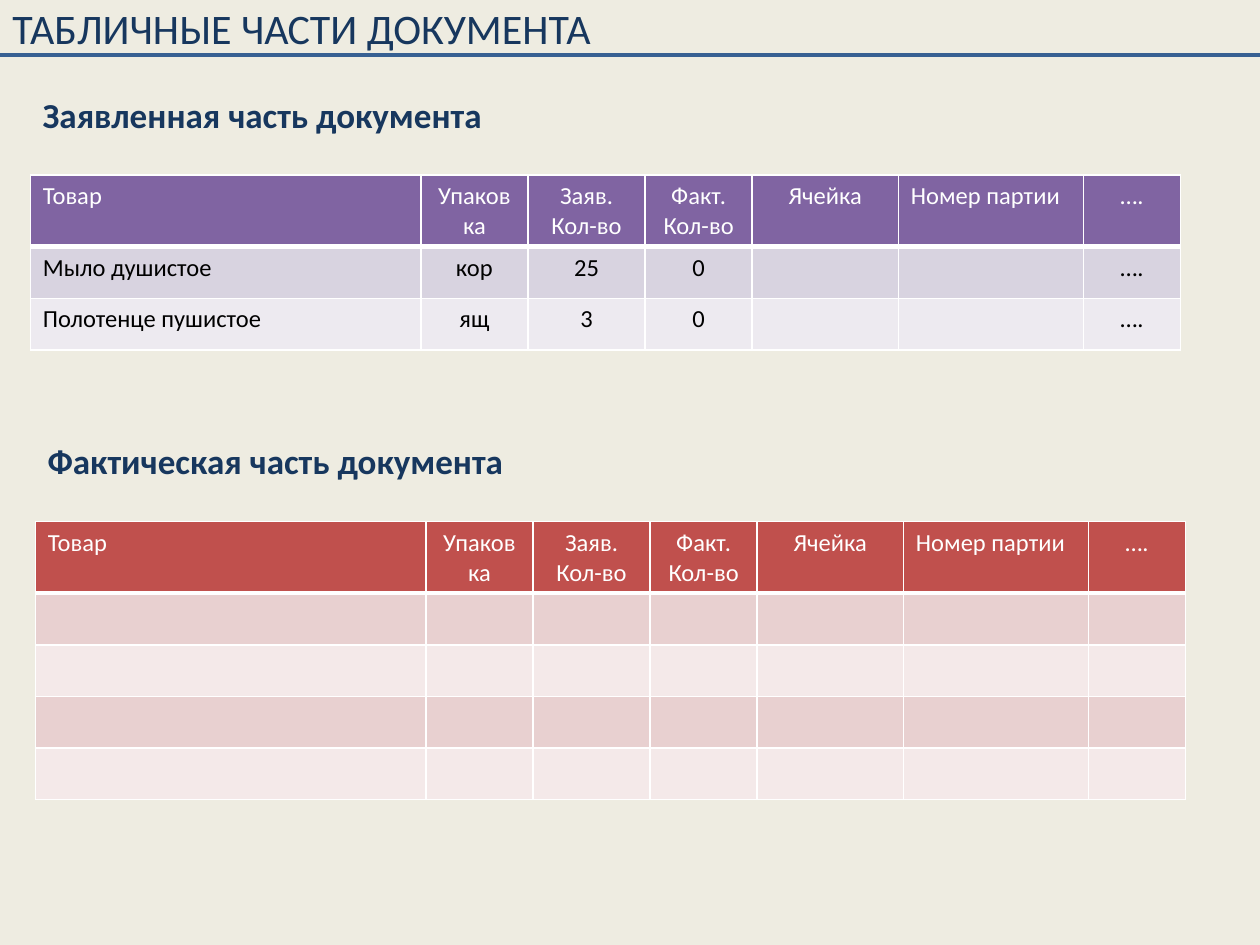
from lxml import etree
from pptx import Presentation
from pptx.dml.color import RGBColor
from pptx.enum import shapes, text
from pptx.oxml import ns
from pptx.util import Inches, Pt

NAVY = RGBColor(0x17, 0x37, 0x5E)
BLUE = RGBColor(0x37, 0x60, 0x92)
CREAM = RGBColor(0xEE, 0xEC, 0xE1)
WHITE = RGBColor(0xFF, 0xFF, 0xFF)
BLACK = RGBColor(0, 0, 0)
# header, odd rows, even rows
PURPLES = RGBColor(0x80, 0x64, 0xA2), RGBColor(0xD8, 0xD3, 0xE0), RGBColor(0xED, 0xEA, 0xF0)
REDS = RGBColor(0xC0, 0x50, 0x4D), RGBColor(0xE8, 0xD0, 0xD0), RGBColor(0xF4, 0xE9, 0xE9)

TITLE = "ТАБЛИЧНЫЕ ЧАСТИ ДОКУМЕНТА"
COLUMNS = [  # heading, width, centred
    ("Товар", 3.1, False),
    ("Упаковка", 0.85, True),
    ("Заяв. Кол-во", 0.93, True),
    ("Факт. Кол-во", 0.85, True),
    ("Ячейка", 1.16, True),
    ("Номер партии", 1.47, False),
    ("….", 0.77, True),
]
DECLARED = [
    ("Мыло душистое", "кор", "25", "0", "", "", "…."),
    ("Полотенце пушистое", "ящ", "3", "0", "", "", "…."),
]
ACTUAL = [("",) * len(COLUMNS)] * 4
SECTIONS = [  # heading, left, top, rows, palette
    ("Заявленная часть документа", 0.24, 0.69, DECLARED, PURPLES),
    ("Фактическая часть документа", 0.28, 3.44, ACTUAL, REDS),
]
HEADING_TO_TABLE = 0.7
ROW_HEIGHT = 0.41


def write(tf, words, size, color, bold=False, centred=False):
    p = tf.paragraphs[0]
    p.alignment = text.PP_ALIGN.CENTER if centred else text.PP_ALIGN.LEFT
    if not words:
        return
    r = p.add_run()
    r.text = words
    r.font.name, r.font.size, r.font.bold = "Calibri", Pt(size), bold
    r.font.color.rgb = color


def add_text(slide, box, words, **fmt):
    tf = slide.shapes.add_textbox(*map(Inches, box)).text_frame
    tf.word_wrap = True
    tf.auto_size = text.MSO_AUTO_SIZE.SHAPE_TO_FIT_TEXT
    write(tf, words, **fmt)


def set_borders(cell, bottom):
    """White 1 pt borders, with a bottom border of the given points."""
    tc_pr = cell._tc.get_or_add_tcPr()
    for side, width in (("L", 1), ("R", 1), ("T", 1), ("B", bottom)):
        ln = etree.SubElement(tc_pr, ns.qn("a:ln" + side), w=str(Pt(width)))
        fill = etree.SubElement(ln, ns.qn("a:solidFill"))
        etree.SubElement(fill, ns.qn("a:srgbClr"), val=str(WHITE))


def add_goods_table(slide, left, top, rows, palette):
    grid = [[heading for heading, _, _ in COLUMNS], *rows]
    width = sum(w for _, w, _ in COLUMNS)
    table = slide.shapes.add_table(
        len(grid), len(COLUMNS), Inches(left), Inches(top),
        Inches(width), Inches(ROW_HEIGHT * len(grid))).table
    for column, (_, w, _) in zip(table.columns, COLUMNS):
        column.width = Inches(w)
    for i, row in enumerate(grid):
        header = i == 0
        table.rows[i].height = Inches(ROW_HEIGHT)
        for j, words in enumerate(row):
            cell = table.cell(i, j)
            set_borders(cell, bottom=3 if header else 1)
            cell.fill.solid()
            cell.fill.fore_color.rgb = palette[0 if header else 2 - i % 2]
            write(cell.text_frame, words, size=14,
                  color=WHITE if header else BLACK, centred=COLUMNS[j][2])


def main():
    prs = Presentation()
    prs.slide_width, prs.slide_height = Inches(10), Inches(7.5)
    s = prs.slides.add_slide(prs.slide_layouts[6])
    s.background.fill.solid()
    s.background.fill.fore_color.rgb = CREAM

    add_text(s, (0, -0.03, 10, 0.5), TITLE, size=24, color=NAVY)
    rule = s.shapes.add_connector(
        shapes.MSO_CONNECTOR.STRAIGHT, 0, Inches(0.44), Inches(10), Inches(0.44))
    rule.line.color.rgb = BLUE
    rule.line.width = Pt(2.25)
    etree.SubElement(rule._element.spPr, ns.qn("a:effectLst"))

    for heading, left, top, rows, palette in SECTIONS:
        add_text(s, (left, top, 3.86, 0.44), heading, size=20, color=NAVY, bold=True)
        add_goods_table(s, left, top + HEADING_TO_TABLE, rows, palette)

    prs.save("out.pptx")


if __name__ == "__main__":
    main()
